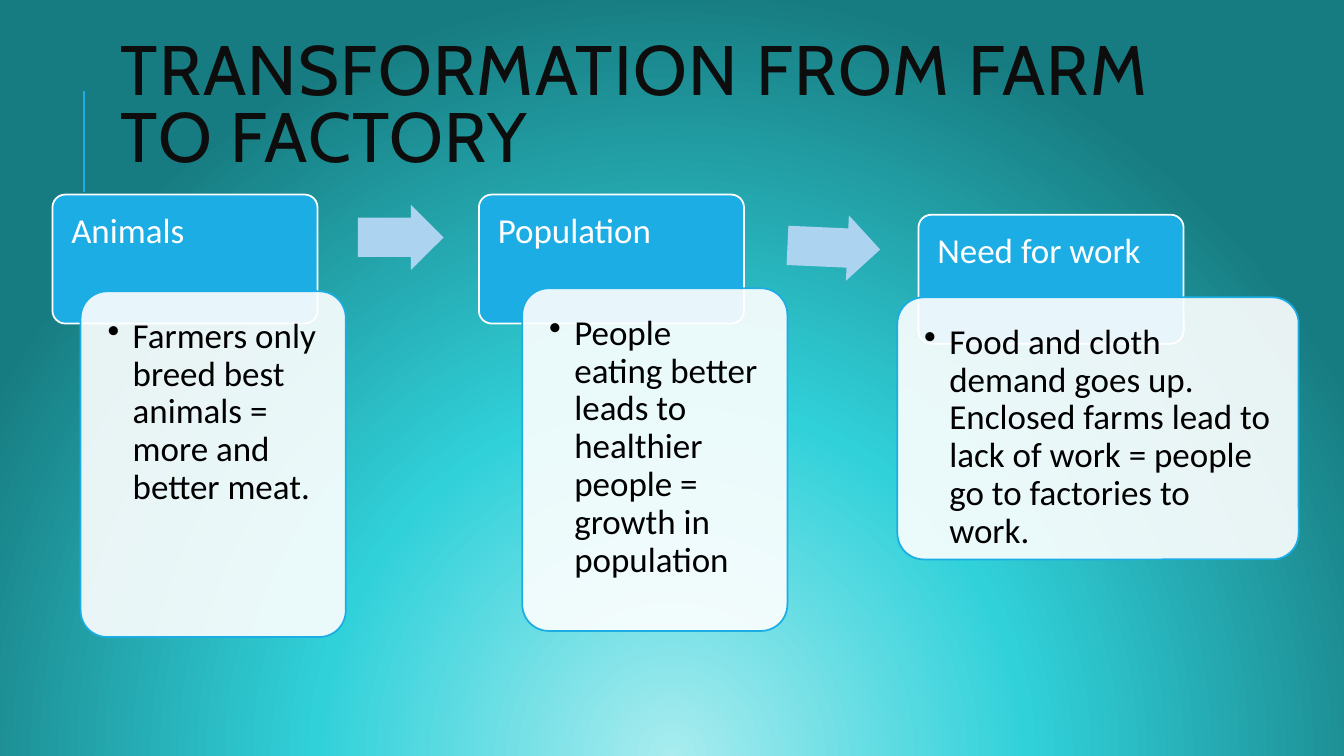
from lxml import etree
from pptx import Presentation
from pptx.dml.color import RGBColor
from pptx.enum import shapes, text
from pptx.oxml.ns import qn
from pptx.util import Inches, Pt

BLUE = RGBColor(0x1C, 0xAD, 0xE4)
PALE_BLUE = RGBColor(0xAC, 0xD3, 0xEF)
WHITE = RGBColor(0xFF, 0xFF, 0xFF)
BLACK = RGBColor(0, 0, 0)
INK = RGBColor(0x0D, 0x0D, 0x0D)
GLOW = [(0, "A8ECEF"), (46, "31D1DA"), (100, "177C81")]
INSET = Inches(0.19)

# heading, heading left and top, detail, detail box
STEPS = [
    ("Animals", 0.52, 1.93,
     "Farmers only breed best animals = more and better meat.",
     (0.8, 2.89, 2.63, 3.43)),
    ("Population", 4.75, 1.93,
     "People eating better leads to healthier people = growth in population",
     (5.18, 2.86, 2.63, 3.4)),
    ("Need for work", 9.11, 2.13,
     "Food and cloth demand goes up. Enclosed farms lead to lack of work"
     " = people go to factories to work.",
     (8.9, 2.95, 3.98, 2.6)),
]
# box, rotation
ARROWS = [((3.55, 2.03, 0.85, 0.65), 0.1), ((7.81, 2.13, 0.92, 0.65), 2.6)]


def write(shape, words, spacing, font_format, **frame_format):
    """Fill the shape with one left-aligned paragraph and return it."""
    frame = shape.text_frame
    frame.word_wrap = True
    for name, value in frame_format.items():
        setattr(frame, name, value)
    para = frame.paragraphs[0]
    para.alignment = text.PP_ALIGN.LEFT
    para.line_spacing = spacing
    span = para.add_run()
    span.text = words
    for name, value in font_format.items():
        if name == "color":
            span.font.color.rgb = value
        else:
            setattr(span.font, name, value)
    return para


def add_card(page, box, outline, fill, words, color, left_inset):
    card = page.shapes.add_shape(shapes.MSO_SHAPE.ROUNDED_RECTANGLE, *map(Inches, box))
    card.shadow.inherit = False
    card.adjustments[0] = 0.1
    card.fill.solid()
    card.fill.fore_color.rgb = fill
    card.line.color.rgb = outline
    card.line.width = Pt(1.25)
    para = write(card, words, 0.9, {"name": "Calibri", "size": Pt(25), "color": color},
                 vertical_anchor=text.MSO_ANCHOR.TOP, margin_left=left_inset,
                 margin_top=left_inset, margin_right=left_inset, margin_bottom=0)
    return card, para


deck = Presentation()
deck.slide_width, deck.slide_height = Inches(13.33), Inches(7.5)
page = deck.slides.add_slide(deck.slide_layouts[5])

# Background: a glow rising from below the bottom edge
page.background.fill.gradient()
gradient = page.element.find(".//" + qn("a:gradFill"))
for child in list(gradient):
    gradient.remove(child)
stops = etree.SubElement(gradient, qn("a:gsLst"))
for percent, color in GLOW:
    stop = etree.SubElement(stops, qn("a:gs"), pos=str(percent * 1000))
    etree.SubElement(stop, qn("a:srgbClr"), val=color)
circle = etree.SubElement(gradient, qn("a:path"), {"path": "circle"})
etree.SubElement(circle, qn("a:fillToRect"), l="50000", t="130000", r="50000", b="-30000")

rule = page.shapes.add_connector(shapes.MSO_CONNECTOR.STRAIGHT, Inches(0.83), Inches(1.9),
                                 Inches(0.83), Inches(0.9))
rule.line.color.rgb = BLUE
rule.line.width = Pt(1.5)
etree.SubElement(rule.element.spPr, qn("a:effectLst"))

title = page.shapes.title
title.left, title.top, title.width, title.height = map(Inches, (1.1, 0.26, 10.63, 1.64))
heading = write(title, "TRANSFORMATION FROM FARM TO FACTORY", 0.8,
                {"name": "Cabin", "size": Pt(50), "color": INK},
                vertical_anchor=text.MSO_ANCHOR.MIDDLE, auto_size=text.MSO_AUTO_SIZE.NONE)
heading.runs[0].font._element.set("spc", "100")

for label, left, top, detail, detail_box in STEPS:
    add_card(page, (left, top, 2.63, 1.28), WHITE, BLUE, label, WHITE, Inches(0.15))
    card, para = add_card(page, detail_box, BLUE, WHITE, detail, BLACK, INSET)
    fill_color = card.element.spPr.find(qn("a:solidFill"))[0]
    etree.SubElement(fill_color, qn("a:alpha"), val="90000")
    bullet = para._p.get_or_add_pPr()
    bullet.set("marL", str(Inches(0.25)))
    bullet.set("indent", str(Inches(-0.25)))
    etree.SubElement(bullet, qn("a:buChar"), char="•")

for box, angle in ARROWS:
    arrow = page.shapes.add_shape(shapes.MSO_SHAPE.RIGHT_ARROW, *map(Inches, box))
    arrow.shadow.inherit = False
    arrow.rotation = angle
    arrow.adjustments[0], arrow.adjustments[1] = 0.6, 0.5
    arrow.fill.solid()
    arrow.fill.fore_color.rgb = PALE_BLUE
    arrow.line.fill.background()

deck.save("out.pptx")
